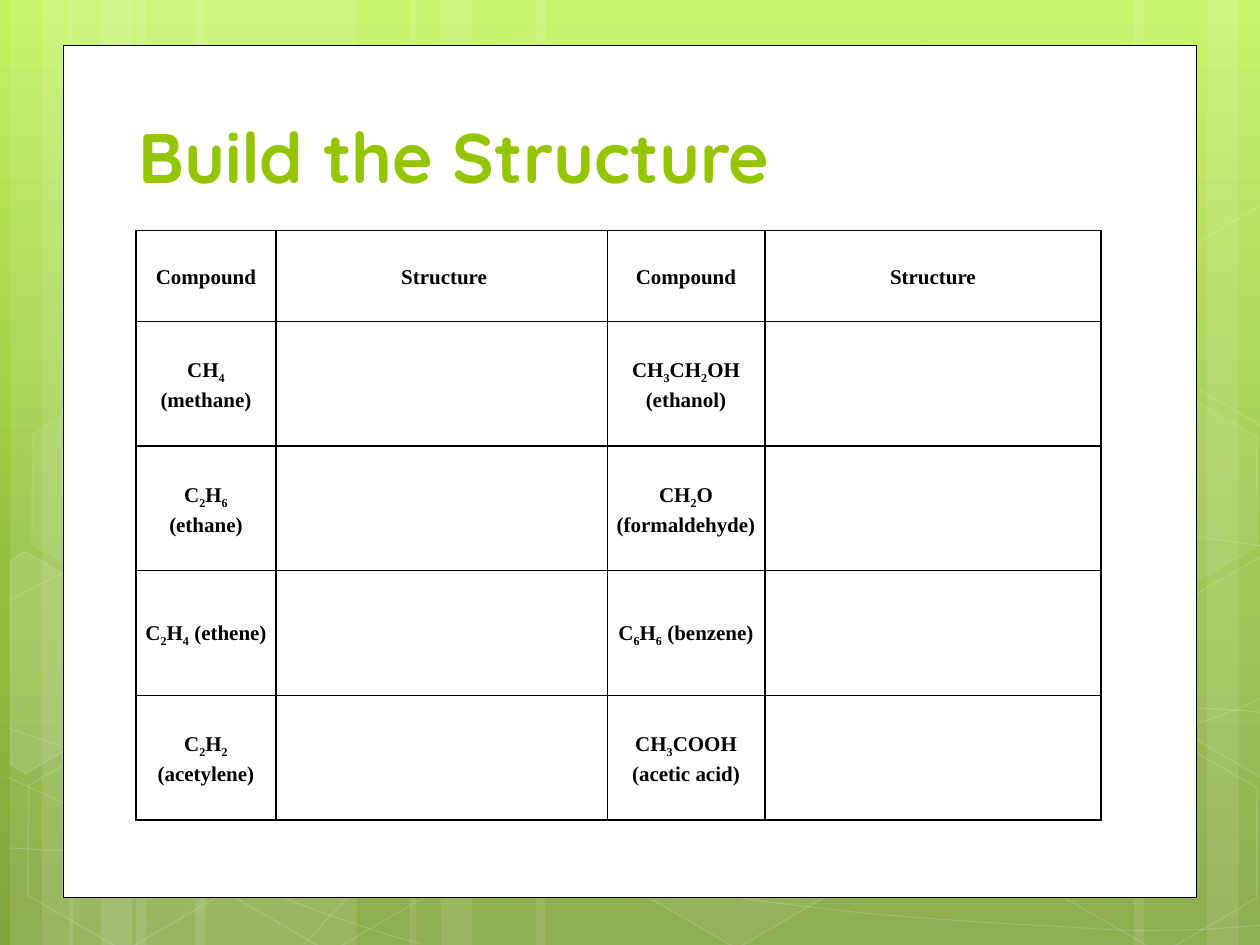
from copy import deepcopy
from itertools import groupby
from math import cos, radians, sin

from lxml import etree
from pptx import Presentation
from pptx.dml.color import RGBColor
from pptx.enum.shapes import MSO_SHAPE
from pptx.enum.text import MSO_ANCHOR, PP_ALIGN
from pptx.oxml.ns import qn
from pptx.util import Pt

PX = 9144
RECT, HEXAGON = MSO_SHAPE.RECTANGLE, MSO_SHAPE.HEXAGON
MIDDLE, BOTTOM = MSO_ANCHOR.MIDDLE, MSO_ANCHOR.BOTTOM
LEFT, CENTER = PP_ALIGN.LEFT, PP_ALIGN.CENTER
COLORS = {"white": "FFFFFF", "black": "000000", "title": "94C600",
          "top": "C3F35F", "middle": "93BF3F", "bottom": "81A53E"}
RGB = {name: RGBColor.from_string(value) for name, value in COLORS.items()}


def write(tf, text, font, size, color, align=LEFT, spacing=1.0):
    p = tf.paragraphs[0]
    p.alignment = align
    p.line_spacing = spacing
    for is_digit, chars in groupby(text, str.isdigit):
        r = p.add_run()
        r.text = "".join(chars)
        r.font.name = font
        r.font.size = Pt(size)
        r.font.bold = True
        r.font.color.rgb = RGB[color]
        if is_digit:
            r.font._element.set("baseline", "-25000")


def paint(sp, fill=0, width=0, line=0):
    sp.shadow.inherit = False
    for part, alpha in ((sp.fill, fill), (sp.line.fill, line)):
        if alpha:
            part.solid()
            part.fore_color.rgb = RGB["white"]
        else:
            part.background()
    if line:
        sp.line.width = Pt(width)
    alphas = [alpha for alpha in (fill, line) if alpha]
    for color, alpha in zip(sp._element.spPr.iter(qn("a:srgbClr")), alphas):
        if alpha < 100:
            etree.SubElement(color, qn("a:alpha"), val=str(alpha * 1000))


prs = Presentation()
prs.slide_width, prs.slide_height = 1000 * PX, 750 * PX
s = prs.slides.add_slide(prs.slide_layouts[6])

fill = s.background.fill
fill.gradient()
fill.gradient_angle = 270
stop_list = next(s._element.iter(qn("a:gsLst")))
stop_list.append(deepcopy(stop_list[-1]))
stops = (("top", 0), ("middle", 0.62), ("bottom", 1))
for stop, (name, position) in zip(fill.gradient_stops, stops):
    stop.color.rgb = RGB[name]
    stop.position = position

stripes = [(108, 175, 0), (8, 50, 0), (33, 83, 0), (155, 175, 0), (55, 50, 0), (80, 83, 0),
           (733, 175, 180), (958, 50, 180), (900, 83, 180),
           (425, 308, 0), (325, 50, 0), (350, 83, 0)]
for x, w, rotation in stripes:
    sp = s.shapes.add_shape(RECT, x * PX, 0, w * PX, 750 * PX)
    sp.rotation = rotation
    paint(sp, fill=10)

curves = [
    [(7, 673), (61, 676), (115, 679), (190, 678), (265, 677), (358, 675), (458, 665),
     (558, 655), (700, 636), (792, 617), (883, 598), (977, 568), (1007, 551)],
    [(7, 477), (36, 461), (65, 446), (121, 431), (178, 416), (259, 394), (347, 387),
     (436, 380), (544, 379), (654, 387), (764, 395), (947, 426), (1007, 434)],
    [(6, 617), (127, 672), (247, 727), (334, 749)],
    [(7, 578), (38, 589), (70, 600), (128, 616), (186, 631), (273, 656), (357, 673),
     (440, 690), (545, 708), (628, 718), (711, 729), (800, 733), (853, 736),
     (905, 740), (919, 738), (945, 738), (971, 737), (989, 735), (1007, 734)],
    [(242, 749), (260, 729), (278, 709), (302, 691), (326, 673), (360, 653), (388, 639),
     (416, 625), (433, 619), (470, 609), (506, 599), (573, 585), (608, 578),
     (644, 571), (649, 571), (680, 569), (711, 566), (760, 563), (794, 562),
     (829, 561), (886, 562), (886, 562), (908, 562), (931, 562), (953, 562),
     (971, 563), (988, 564), (997, 565), (1006, 566), (1003, 565), (1006, 566)],
]
for start, *controls in curves:
    builder = s.shapes.build_freeform(*start, scale=PX)
    builder.add_line_segments(controls, close=False)
    sp = builder.convert_to_shape()
    paint(sp, width=0.5, line=20)
    outline = next(sp._element.iter(qn("a:path")))
    segments = outline.findall(qn("a:lnTo"))
    for i in range(0, len(segments), 3):
        bezier = etree.SubElement(outline, qn("a:cubicBezTo"))
        for segment in segments[i:i + 3]:
            bezier.append(segment[0])
            outline.remove(segment)

hexagons = [(334, 36, 4, 8), (497, 589, 6, 12), (11, 591, 0, 12),
            (14, 312, 7, 8), (174, 592, 0, 12), (753, 453, 10, 12),
            (834, 593, 0, 12), (834, 314, 7, 8)]
cut_hexagons = [
    (36, 535, 10, [(8, 445), (19, 438), (96, 482), (95, 570), (20, 614), (8, 607)]),
    (985, 520, 4, [(926, 485), (1001, 441), (1009, 446), (1009, 613), (1002, 617), (926, 573)]),
    (985, 241, 0, [(926, 207), (1001, 163), (1010, 168), (1009, 335), (1002, 339), (926, 295)]),
]
for x, y, alpha, line in hexagons:
    sp = s.shapes.add_shape(HEXAGON, x * PX, y * PX, 175 * PX, 152 * PX)
    sp.adjustments[0] = 0.285
    sp.adjustments[1] = 1.155
    sp.rotation = 30
    paint(sp, alpha, 1, line)

cos30, sin30 = cos(radians(30)), sin(radians(30))
for cx, cy, alpha, corners in cut_hexagons:
    points = [(cx + (x - cx) * cos30 + (y - cy) * sin30,
               cy - (x - cx) * sin30 + (y - cy) * cos30) for x, y in corners]
    builder = s.shapes.build_freeform(*points[0], scale=PX)
    builder.add_line_segments(points[1:])
    sp = builder.convert_to_shape()
    sp.rotation = 30
    paint(sp, alpha, 1, 12)

panel = s.shapes.add_shape(RECT, 50 * PX, 36 * PX, 900 * PX, 676 * PX)
paint(panel, 100, 0.5, 100)
panel.line.color.rgb = RGB["black"]

title = s.shapes.add_textbox(100 * PX, 75 * PX, 768 * PX, 87 * PX)
tf = title.text_frame
tf.word_wrap = True
tf.vertical_anchor = BOTTOM
write(tf, "Build the Structure", font="Quicksand", size=40, color="title")

rows = [("Compound", " Structure", "Compound", "Structure"),
        ("CH4 (methane)", "", "CH3CH2OH (ethanol)", ""),
        ("C2H6 (ethane)", "", "CH2O (formaldehyde)", ""),
        ("C2H4 (ethene)", "", "C6H6 (benzene)", ""),
        ("C2H2 (acetylene)", "", "CH3COOH (acetic acid)", "")]
widths = (111, 263, 125, 267)
heights = (72, 99, 99, 99, 99)
table = s.shapes.add_table(len(rows), len(widths), 108 * PX, 183 * PX,
                           sum(widths) * PX, sum(heights) * PX).table
table.first_row = table.horz_banding = False
for column, width in zip(table.columns, widths):
    column.width = width * PX
for row, height, texts in zip(table.rows, heights, rows):
    row.height = height * PX
    for cell, text in zip(row.cells, texts):
        cell.margin_left = cell.margin_right = 7 * PX
        cell.margin_top = cell.margin_bottom = 0
        cell.vertical_anchor = MIDDLE
        cell.fill.background()
        tcPr = cell._tc.get_or_add_tcPr()
        for i, side in enumerate(("lnL", "lnR", "lnT", "lnB")):
            ln = etree.Element(qn("a:" + side), w=str(Pt(1)))
            solid = etree.SubElement(ln, qn("a:solidFill"))
            etree.SubElement(solid, qn("a:srgbClr"), val=COLORS["black"])
            tcPr.insert(i, ln)
        if text:
            write(cell.text_frame, text, font="Times New Roman", size=12,
                  color="black", align=CENTER, spacing=1.15)

prs.save("out.pptx")
